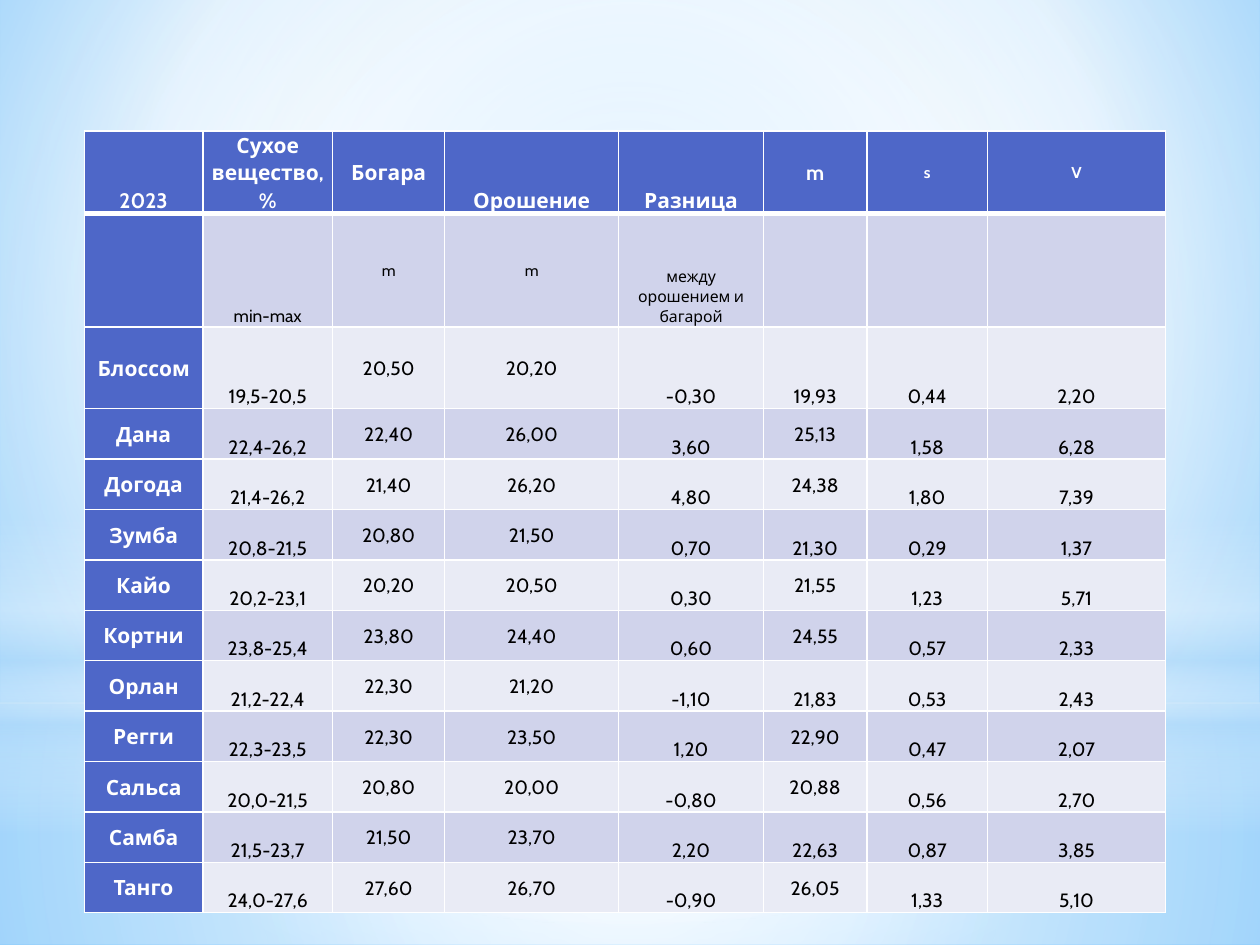
"""Build a slide with a table of dry matter content by variety for 2023."""
from lxml import etree
from pptx import Presentation
from pptx.dml.color import RGBColor
from pptx.enum import shapes, text
from pptx.oxml import ns
from pptx.util import Inches, Pt

WHITE = RGBColor(0xFF, 0xFF, 0xFF)
BLACK = RGBColor(0, 0, 0)
BLUE = RGBColor(0x4E, 0x67, 0xC8)
BAND_DARK = RGBColor(0xD0, 0xD3, 0xEB)
BAND_LIGHT = RGBColor(0xE9, 0xEB, 0xF5)
SKY = RGBColor(0x9E, 0xD5, 0xFF)
AZURE = RGBColor(0x5B, 0xB9, 0xFF)
PALE = RGBColor(0xB4, 0xDC, 0xFA)

ROWS = [
    ("2023", "Сухое вещество,%", "Богара", "Орошение", "Разница", "m", "s", "V"),
    ("", "min-max", "m", "m", "между орошением и багарой", "", "", ""),
    ("Блоссом", "19,5-20,5", "20,50", "20,20", "-0,30", "19,93", "0,44", "2,20"),
    ("Дана", "22,4-26,2", "22,40", "26,00", "3,60", "25,13", "1,58", "6,28"),
    ("Догода", "21,4-26,2", "21,40", "26,20", "4,80", "24,38", "1,80", "7,39"),
    ("Зумба", "20,8-21,5", "20,80", "21,50", "0,70", "21,30", "0,29", "1,37"),
    ("Кайо", "20,2-23,1", "20,20", "20,50", "0,30", "21,55", "1,23", "5,71"),
    ("Кортни", "23,8-25,4", "23,80", "24,40", "0,60", "24,55", "0,57", "2,33"),
    ("Орлан", "21,2-22,4", "22,30", "21,20", "-1,10", "21,83", "0,53", "2,43"),
    ("Регги", "22,3-23,5", "22,30", "23,50", "1,20", "22,90", "0,47", "2,07"),
    ("Сальса", "20,0-21,5", "20,80", "20,00", "-0,80", "20,88", "0,56", "2,70"),
    ("Самба", "21,5-23,7", "21,50", "23,70", "2,20", "22,63", "0,87", "3,85"),
    ("Танго", "24,0-27,6", "27,60", "26,70", "-0,90", "26,05", "1,33", "5,10"),
]
COL_WIDTHS = [0.94, 1.03, 0.89, 1.38, 1.15, 0.82, 0.96, 1.41]
ROW_HEIGHTS = [0.65, 0.9, 0.65] + [0.4] * 10
HEADER_ANCHORS = "bmmbbmmm"
BODY_ANCHORS = "mbmmbmbb"
LOW_MEAN_ROWS = {"Блоссом", "Зумба", "Орлан", "Самба"}
ANCHORS = {"m": text.MSO_ANCHOR.MIDDLE, "b": text.MSO_ANCHOR.BOTTOM}

CENTRE = (50, 50, 50, 50)
BACKGROUND = ([(0, SKY, 100), (60, WHITE, 100), (100, AZURE, 100)], (20, 10, 20, 60))
RECT, OVAL = shapes.MSO_SHAPE.RECTANGLE, shapes.MSO_SHAPE.OVAL
GLOWS = [
    (RECT, 5.58, 1.92, [(0, WHITE, 91), (37, WHITE, 76), (100, PALE, 79)], CENTRE),
    (RECT, 0, 5.58, [(0, WHITE, 89), (48, WHITE, 62), (100, PALE, 79)], CENTRE),
    (RECT, 4.12, 2.5, [(0, WHITE, 0), (29, WHITE, 30), (45, PALE, 40),
                       (55, WHITE, 26), (65, PALE, 60), (100, WHITE, 0)], None),
    (OVAL, 1.75, 5.58, [(0, WHITE, 100), (56, WHITE, 0)], CENTRE),
]


def add(parent, tag, **attrs):
    el = etree.SubElement(parent, ns.qn(tag))
    for name, value in attrs.items():
        el.set(name, str(value))
    return el


def add_gradient(parent, stops, focus):
    grad = add(parent, "a:gradFill", rotWithShape=1)
    stop_list = add(grad, "a:gsLst")
    for pos, color, opacity in stops:
        clr = add(add(stop_list, "a:gs", pos=pos * 1000), "a:srgbClr", val=color)
        if opacity < 100:
            add(clr, "a:alpha", val=opacity * 1000)
    if focus:
        sides = {side: v * 1000 for side, v in zip("ltrb", focus)}
        add(add(grad, "a:path", path="circle"), "a:fillToRect", **sides)
    else:
        add(grad, "a:lin", ang=90 * 60000, scaled=0)
    return grad


def add_glow(s, kind, top, height, stops, focus):
    sp = s.shapes.add_shape(kind, 0, Inches(top), Inches(10), Inches(height))
    add_gradient(sp.element.spPr, stops, focus)
    sp.line.fill.background()
    sp.shadow.inherit = False


def cell_anchor(row, col):
    if row == 0:
        return HEADER_ANCHORS[col]
    if col == 5 and ROWS[row][0] in LOW_MEAN_ROWS:
        return "b"
    return BODY_ANCHORS[col]


def cell_size(row, col):
    if row == 0:
        return 9 if col > 5 else 12
    if row == 1:
        return 10 if col == 1 else 9
    return 11 if col else 12


def format_cell(cell, row, col):
    head = row == 0 or col == 0
    tc_pr = cell._tc.get_or_add_tcPr()
    for side in "LRTB":
        thick = (row, side) in {(0, "B"), (1, "T")}
        ln = add(tc_pr, f"a:ln{side}", w=Pt(3 if thick else 1))
        add(add(ln, "a:solidFill"), "a:srgbClr", val=WHITE)
    cell.fill.solid()
    cell.fill.fore_color.rgb = BLUE if head else BAND_DARK if row % 2 else BAND_LIGHT
    if not ROWS[row][col]:
        return
    layout = {"margin_left": Inches(0.06), "margin_right": Inches(0.06), "margin_top": 0,
              "margin_bottom": 0, "vertical_anchor": ANCHORS[cell_anchor(row, col)]}
    for name, value in layout.items():
        setattr(cell, name, value)
    p = cell.text_frame.paragraphs[0]
    p.alignment, p.line_spacing = text.PP_ALIGN.CENTER, 1.07
    r = p.add_run()
    r.text = ROWS[row][col]
    for name, value in {"name": "Cabin", "size": Pt(cell_size(row, col)), "bold": head}.items():
        setattr(r.font, name, value)
    r.font.color.rgb = WHITE if head else BLACK


def add_results(s):
    table = s.shapes.add_table(len(ROWS), len(COL_WIDTHS), Inches(0.67), Inches(1.04),
                               Inches(sum(COL_WIDTHS)), Inches(sum(ROW_HEIGHTS))).table
    for column, width in zip(table.columns, COL_WIDTHS):
        column.width = Inches(width)
    for i, (row, height) in enumerate(zip(table.rows, ROW_HEIGHTS)):
        row.height = Inches(height)
        for j, cell in enumerate(row.cells):
            format_cell(cell, i, j)


def main():
    prs = Presentation()
    prs.slide_width, prs.slide_height = Inches(10), Inches(7.5)
    s = prs.slides.add_slide(prs.slide_layouts[6])
    s.background.fill.solid()
    bg = s.element.find(".//" + ns.qn("p:bgPr"))
    bg.replace(bg[0], add_gradient(bg, *BACKGROUND))
    for glow in GLOWS:
        add_glow(s, *glow)
    add_results(s)
    prs.save("out.pptx")


if __name__ == "__main__":
    main()
